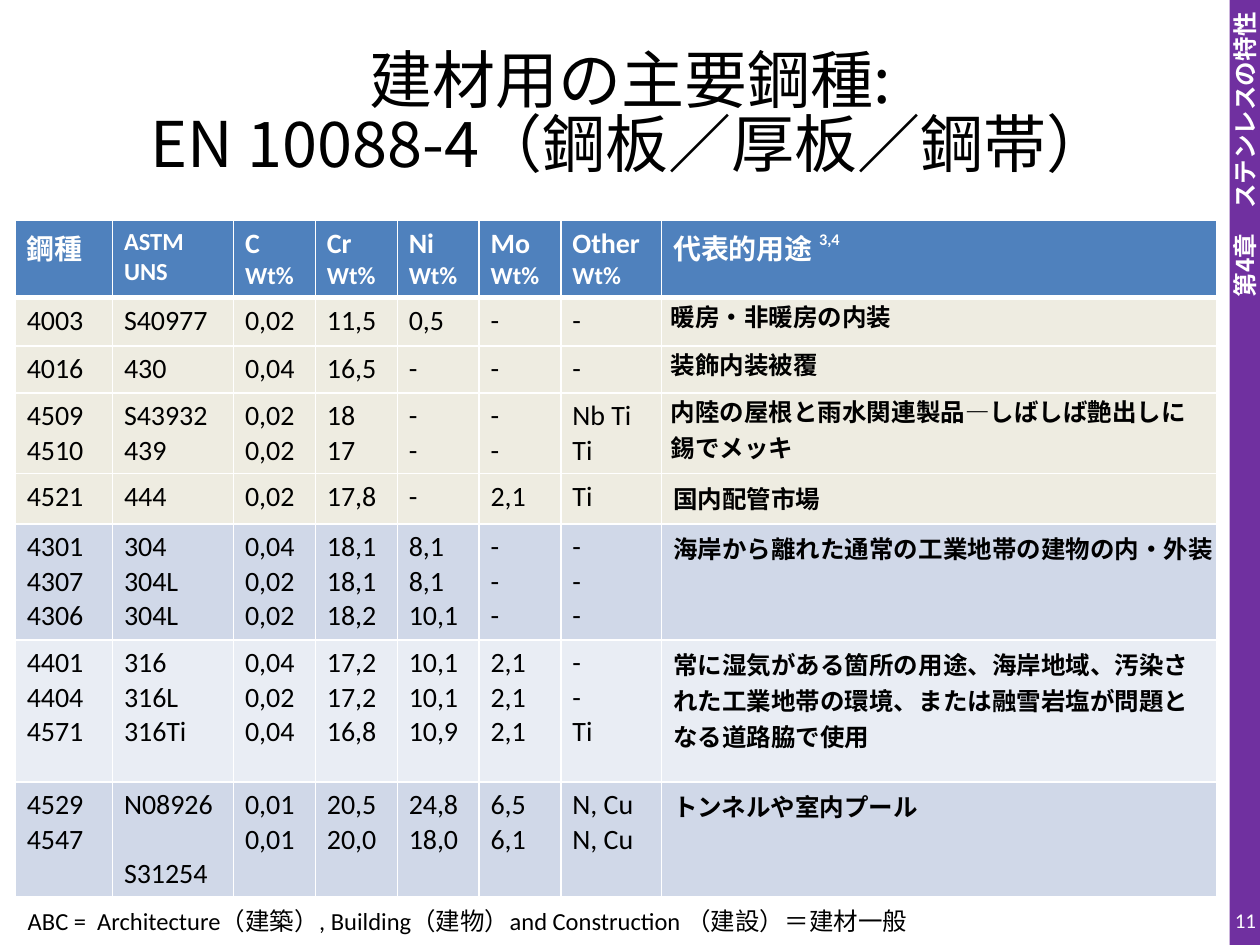
"""Build the slide on the main stainless steel grades for construction."""
from lxml import etree
from pptx import Presentation
from pptx import util as u
from pptx.dml.color import RGBColor
from pptx.enum import shapes, text
from pptx.oxml import ns

COLORS = {
    "white": "FFFFFF", "black": "000000", "purple": "7030A0", "header": "4F81BD",
    "ferritic": "EEECE1", "band": "D0D8E8", "light_band": "E9EDF4",
}
JAPANESE = "Noto Sans CJK JP"
COLUMN_WIDTHS = [1.96, 2.44, 1.65, 1.65, 1.65, 1.65, 2.03, 11.2]
ROW_HEIGHTS = [1.55, 0.97, 0.95, 1.63, 1.01, 2.34, 2.86, 2.32]
ROW_FILLS = ["header"] + ["ferritic"] * 4 + ["band", "light_band", "band"]
HEADER = ["鋼種", "ASTM\nUNS", "C\nWt%", "Cr\nWt%", "Ni\nWt%", "Mo\nWt%", "Other\nWt%", "代表的用途 "]
GRADES = [
    ["4003", "S40977", "0,02", "11,5", "0,5", "-", "-", "暖房・非暖房の内装"],
    ["4016", "430", "0,04", "16,5", "-", "-", "-", "装飾内装被覆"],
    ["4509\n4510", "S43932\n439", "0,02\n0,02", "18\n17", "-\n-", "-\n-", "Nb Ti\nTi",
     "内陸の屋根と雨水関連製品―しばしば艶出しに錫でメッキ"],
    ["4521", "444", "0,02", "17,8", "-", "2,1", "Ti", "国内配管市場"],
    ["4301\n4307\n4306", "304\n304L\n304L", "0,04\n0,02\n0,02", "18,1\n18,1\n18,2",
     "8,1\n8,1\n10,1", "-\n-\n-", "-\n-\n-", "海岸から離れた通常の工業地帯の建物の内・外装"],
    ["4401\n4404\n4571", "316\n316L\n316Ti", "0,04\n0,02\n0,04", "17,2\n17,2\n16,8",
     "10,1\n10,1\n10,9", "2,1\n2,1\n2,1", "-\n-\nTi",
     "常に湿気がある箇所の用途、海岸地域、汚染された工業地帯の環境、または融雪岩塩が問題となる道路脇で使用"],
    ["4529\n4547", "N08926\nS31254", "0,01\n0,01", "20,5\n20,0", "24,8\n18,0", "6,5\n6,1",
     "N, Cu\nN, Cu", "トンネルや室内プール"],
]
TIGHT_ROWS = (1, 2, 3)
LONG_LINE_ROW = 5


def rgb(name):
    """Return the named colour."""
    return RGBColor.from_string(COLORS[name])


def add_run(paragraph, content, size, color="black", font="Calibri", bold=False):
    """Add one formatted run with a Japanese font for East Asian text."""
    run = paragraph.add_run()
    run.text = content
    run.font.size = u.Pt(size)
    run.font.name = font
    run.font.bold = bold
    run.font.color.rgb = rgb(color)
    etree.SubElement(run.font._element, ns.qn("a:ea"), typeface=JAPANESE)
    return run


def paragraphs_for(frame, content):
    """Yield a paragraph of the frame for each line of content."""
    for index, line in enumerate(content.split("\n")):
        yield (frame.add_paragraph() if index else frame.paragraphs[0]), line


def add_text(slide, box, content, size, align=text.PP_ALIGN.LEFT,
             anchor=text.MSO_ANCHOR.TOP, spacing=None, inset=None, **style):
    """Add a text box with one paragraph per line."""
    shape = slide.shapes.add_textbox(*map(u.Cm, box))
    frame = shape.text_frame
    frame.word_wrap = True
    frame.vertical_anchor = anchor
    if inset is not None:
        frame.margin_left = frame.margin_right = u.Cm(inset)
        frame.margin_top = frame.margin_bottom = u.Cm(inset)
    for paragraph, line in paragraphs_for(frame, content):
        paragraph.alignment = align
        if spacing:
            paragraph.line_spacing = spacing
        add_run(paragraph, line, size, **style)


def add_sidebar(slide, content):
    """Add the purple chapter bar with upward-reading text."""
    bar = slide.shapes.add_shape(shapes.MSO_SHAPE.RECTANGLE, u.Cm(24.79), 0, u.Cm(0.61), u.Cm(19.05))
    bar.shadow.inherit = False
    bar.fill.solid()
    bar.fill.fore_color.rgb = rgb("purple")
    bar.line.fill.background()
    frame = bar.text_frame
    frame.word_wrap = True
    frame.vertical_anchor = text.MSO_ANCHOR.MIDDLE
    frame._txBody.bodyPr.set("vert", "vert270")
    paragraph = frame.paragraphs[0]
    paragraph.alignment = text.PP_ALIGN.RIGHT
    add_run(paragraph, content, 14, "white", JAPANESE, True)


def style_cell(cell, fill, is_header):
    """Give a cell its white borders, fill and side margins."""
    properties = cell._tc.get_or_add_tcPr()
    for side in "LRTB":
        width = 3 if is_header and side == "B" else 1
        line = etree.SubElement(properties, ns.qn(f"a:ln{side}"), w=str(u.Pt(width)))
        solid = etree.SubElement(line, ns.qn("a:solidFill"))
        etree.SubElement(solid, ns.qn("a:srgbClr"), val=COLORS["white"])
    cell.fill.solid()
    cell.fill.fore_color.rgb = rgb(fill)
    cell.margin_left = cell.margin_right = u.Cm(0.23)


def fill_header(cell, content):
    """Write a heading with its unit on a smaller second line."""
    for paragraph, line in paragraphs_for(cell.text_frame, content):
        size = 14 if line in ("ASTM", "UNS", "Wt%") else 16
        add_run(paragraph, line, size, "white", bold=True)


def fill_use(cell, content, row):
    """Write the typical use of a grade in bold."""
    if row in TIGHT_ROWS:
        cell.margin_left = cell.margin_right = u.Cm(0.18)
        cell.margin_top = cell.margin_bottom = 0
    if row == LONG_LINE_ROW:
        cell.margin_right = u.Cm(0.05)
    add_run(cell.text_frame.paragraphs[0], content, 14, font="Arial", bold=True)


def fill_values(cell, content):
    """Write grade values, one paragraph each."""
    for paragraph, line in paragraphs_for(cell.text_frame, content):
        add_run(paragraph, line, 16)
        if line == "S31254":
            paragraph.space_before = u.Pt(19.5)


def add_grades_table(slide):
    """Add the table of grades, compositions and uses."""
    rows = [HEADER] + GRADES
    table = slide.shapes.add_table(
        len(rows), len(HEADER), u.Cm(0.31), u.Cm(4.45),
        u.Cm(sum(COLUMN_WIDTHS)), u.Cm(sum(ROW_HEIGHTS))).table
    for column, width in zip(table.columns, COLUMN_WIDTHS):
        column.width = u.Cm(width)
    for row, height in zip(table.rows, ROW_HEIGHTS):
        row.height = u.Cm(height)
    for row, contents in enumerate(rows):
        for column, content in enumerate(contents):
            cell = table.cell(row, column)
            style_cell(cell, ROW_FILLS[row], row == 0)
            if row == 0:
                fill_header(cell, content)
            elif column == len(HEADER) - 1:
                fill_use(cell, content, row)
            else:
                fill_values(cell, content)
    heading = table.cell(0, len(HEADER) - 1).text_frame.paragraphs[0]
    reference = add_run(heading, "3,4", 16, "white", bold=True)
    reference.font._element.set("baseline", "50000")


def main():
    """Build and save the slide."""
    presentation = Presentation()
    presentation.slide_width, presentation.slide_height = u.Cm(25.4), u.Cm(19.05)
    slide = presentation.slides.add_slide(presentation.slide_layouts[6])
    add_sidebar(slide, "第4章　ステンレスの特性")
    add_text(slide, (1.27, 0.76, 22.86, 3.18), "建材用の主要鋼種:\nEN 10088-4（鋼板／厚板／鋼帯）", 36,
             text.PP_ALIGN.CENTER, text.MSO_ANCHOR.MIDDLE, 0.85, font=JAPANESE)
    add_grades_table(slide)
    add_text(slide, (0.31, 18.14, 24.2, 0.86),
             "ABC =  Architecture（建築）, Building（建物）and Construction （建設）＝建材一般", 14)
    add_text(slide, (23.72, 18.03, 1.6, 1.02), "11", 12, text.PP_ALIGN.RIGHT,
             text.MSO_ANCHOR.MIDDLE, inset=0, color="white")
    presentation.save("out.pptx")


if __name__ == "__main__":
    main()
